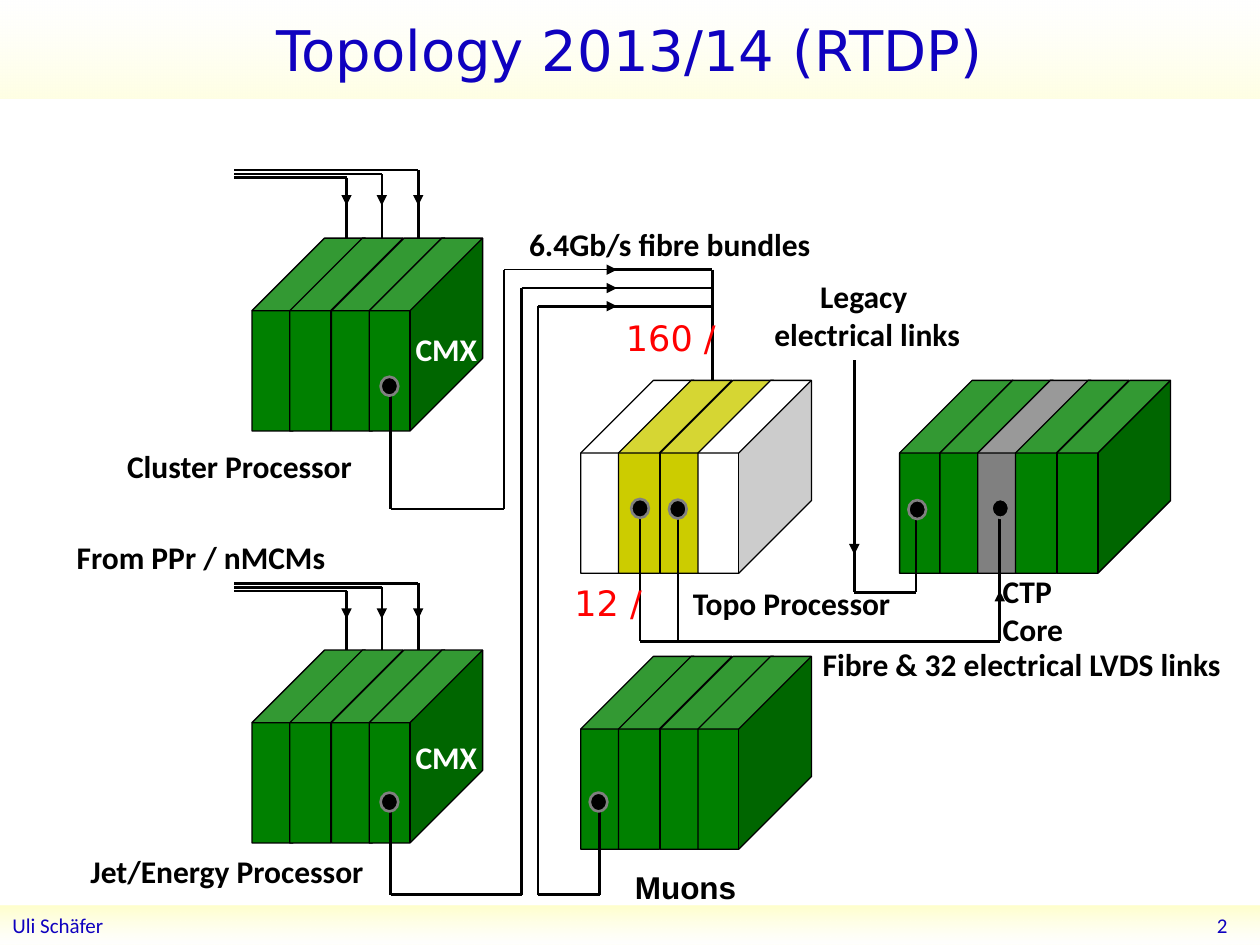
"""Build the slide on the 2013/14 trigger topology."""
import pptx
import pptx.util
import pptx.dml.color
import pptx.enum.shapes
import pptx.enum.text
import pptx.oxml
import pptx.oxml.ns
import lxml.etree

Pt = pptx.util.Pt
Rgb = pptx.dml.color.RGBColor.from_string
Kind = pptx.enum.shapes.MSO_SHAPE
Side = pptx.enum.text.PP_ALIGN
Mid = pptx.enum.text.MSO_ANCHOR.MIDDLE
qn = pptx.oxml.ns.qn
hue = {"ink": "000000", "blue": "0F01BF", "green": "008000", "gray": "808080",
       "gold": "CCCC00", "white": "FFFFFF", "red": "FF0000",
       "deep": "FFFFA0", "soft": "FFFFC5", "pale": "FFFFE3"}

deck = pptx.Presentation()
deck.slide_width, deck.slide_height = Pt(720), Pt(540)
slide = deck.slides.add_slide(deck.slide_layouts[5])
shapes = slide.shapes


def write(box, text, size, font, color, side=Side.LEFT, bold=False):
    para = box.text_frame.paragraphs[0]
    para.alignment = side
    for row, line in enumerate(text.split("\n")):
        if row:
            para.add_line_break()
        run = para.add_run()
        run.text = line
        run.font.size, run.font.name, run.font.bold = Pt(size), font, bold
        run.font.color.rgb = Rgb(hue[color])
    return para


def wire(points, width=1.5, arrow=False):
    for start, end in zip(points, points[1:]):
        line = shapes.add_connector(pptx.enum.shapes.MSO_CONNECTOR.STRAIGHT,
                                    *[Pt(n) for n in start + end])
        line.line.width = Pt(width)
        line.line.color.rgb = Rgb(hue["ink"])
        lxml.etree.SubElement(line._element.spPr, qn("a:effectLst"))
        if arrow:
            lxml.etree.SubElement(line.line._get_or_add_ln(), qn("a:tailEnd"), type="triangle")


title = shapes.title
title.left, title.top, title.width, title.height = Pt(0), Pt(0), Pt(720), Pt(56.2)
write(title, "Topology 2013/14 (RTDP)", 32, "DejaVu Sans", "blue", Side.CENTER)
foot = shapes.add_shape(Kind.RECTANGLE, Pt(0), Pt(517.7), Pt(720), Pt(22.3))
foot.shadow.inherit = False
foot.line.fill.background()
write(foot, "Uli Schäfer", 12, "Calibri", "blue")
page = shapes.add_textbox(Pt(556.6), Pt(517), Pt(151.9), Pt(23))
page.text_frame.word_wrap = True
write(page, "2", 12, "Calibri", "blue", Side.RIGHT)
for box in (title, foot, page):
    box.text_frame.vertical_anchor = Mid

for bar, angle, alphas in ((title, 270, (29, 0, 0)), (foot, 90, (54, 0, 100))):
    stops = "".join(
        f'<a:gs pos="{pos}"><a:srgbClr val="{hue[name]}"><a:alpha val="{alpha * 1000}"/></a:srgbClr></a:gs>'
        for pos, name, alpha in zip((0, 100000, 100000), ("deep", "soft", "pale"), alphas))
    grad = pptx.oxml.parse_xml(
        '<a:gradFill xmlns:a="http://schemas.openxmlformats.org/drawingml/2006/main" rotWithShape="1">'
        f'<a:gsLst>{stops}</a:gsLst><a:lin ang="{angle * 60000}" scaled="1"/></a:gradFill>')
    bar.fill.background()
    old = bar._element.spPr.find(qn("a:noFill"))
    bar._element.spPr.replace(old, grad)

wire([(407, 154.1), (407, 227.5)])
for top in (97.2, 333.4):
    for x, drop in ((198, 4.3), (218.2, 2.2), (239, 0)):
        wire([(133.9, top + drop), (x, top + drop)])
        if drop < 4.3:
            wire([(x, top + drop), (x, top + 4.3)])
        wire([(x, top + 4.3), (x, top + 20.2)], arrow=True)
        wire([(x, top + 15.1), (x, top + 51.8)])

four, five = (0, 21.6, 45.4, 67), (0, 23, 44.6, 66.2, 90)
crates = [
    (331.9, 375.1, four, ["green"] * 4),
    (144, 136.1, four, ["green"] * 4),
    (144, 371.5, four, ["green"] * 4),
    (331.9, 217.4, four, ["white", "gold", "gold", "white"]),
    (514.1, 217.4, five, ["green", "green", "gray", "green", "green"]),
]
for left, top, steps, fills in crates:
    for step, fill in zip(steps, fills):
        card = shapes.add_shape(Kind.CUBE, Pt(left + step), Pt(top), Pt(64.8), Pt(110.2))
        card.adjustments[0] = 0.64
        card.shadow.inherit = False
        card.fill.solid()
        card.fill.fore_color.rgb = Rgb(hue[fill])
        card.line.color.rgb = Rgb(hue["ink"])
        card.line.width = Pt(0.75)

wire([(223.2, 453.6), (223.2, 511.2), (298.1, 511.2), (298.1, 164.6)])
wire([(223.2, 217.4), (223.2, 290.9), (288, 290.9), (288, 154.1)])
wire([(342.7, 458.6), (342.7, 511.2), (307.5, 511.2), (307.5, 175)])
for x, y, width in ((288, 154.1, 0.75), (298.1, 164.6, 0.75), (307.5, 175, 1.5)):
    wire([(x, y), (352.6, y)], width, True)
    wire([(347.8, y), (407, y)])
wire([(365.8, 285.1), (365.8, 366.5), (571.3, 366.5)])
wire([(387.4, 285.1), (387.4, 366.5)])
wire([(571.3, 366.5), (571.3, 337.7)], arrow=True)
wire([(571.3, 346.3), (571.3, 293.8)])
wire([(488.2, 205.9), (488.2, 338.4), (523.4, 338.4), (523.4, 290.9)])
wire([(488.2, 301), (488.2, 316.8)], arrow=True)

for x, y in ((337, 452.9), (217.5, 452.9), (217.5, 215.3), (360.7, 285.1),
             (382.3, 285.5), (566.6, 285.1), (519.1, 285.8)):
    port = shapes.add_shape(Kind.OVAL, Pt(x), Pt(y), Pt(10.1), Pt(10.8))
    port.shadow.inherit = False
    port.fill.solid()
    port.fill.fore_color.rgb = Rgb(hue["ink"])
    port.line.color.rgb = Rgb(hue["gray"])
    port.line.width = Pt(1.5)

labels = [
    ("Topo Processor", 388.8, 329, 132, 20.2, "ink"),
    ("Muons", 355.7, 491, 76, 20.2, "ink"),
    ("Legacy\n electrical links", 428.4, 153.4, 130.3, 51.8, "ink"),
    ("Cluster Processor", 65.5, 250.6, 152.6, 40.3, "ink"),
    ("CMX", 230.4, 183.6, 56, 19.4, "white"),
    ("CTP\nCore", 565.9, 321.8, 56, 34.6, "ink"),
    ("Jet/Energy Processor", 44.6, 481.7, 178, 25.9, "ink"),
    ("CMX", 230.4, 416.9, 56, 19.4, "white"),
    ("From PPr / nMCMs", 36.7, 302.4, 162, 28.1, "ink"),
    ("6.4Gb/s fibre bundles", 295.2, 123.8, 182, 24.5, "ink"),
    ("Fibre & 32 electrical LVDS links", 463, 363.6, 250, 24.5, "ink"),
]
for text, x, y, width, height, color in labels:
    box = shapes.add_textbox(Pt(x), Pt(y), Pt(width), Pt(height))
    box.text_frame.word_wrap = True
    box.text_frame.margin_top = Pt(5)
    side = Side.CENTER if text.startswith("Legacy") else Side.LEFT
    font = "Arial" if text == "Muons" else "Calibri"
    write(box, text, 18, font, color, side, True)

for text, x, y in (("160 /", 350.6, 177.1), ("12 /", 321.1, 329)):
    box = shapes.add_textbox(Pt(x), Pt(y), Pt(78.5), Pt(39.6))
    box.text_frame.word_wrap = True
    write(box, text, 20, "DejaVu Sans", "red").space_before = Pt(4)

deck.save("out.pptx")
